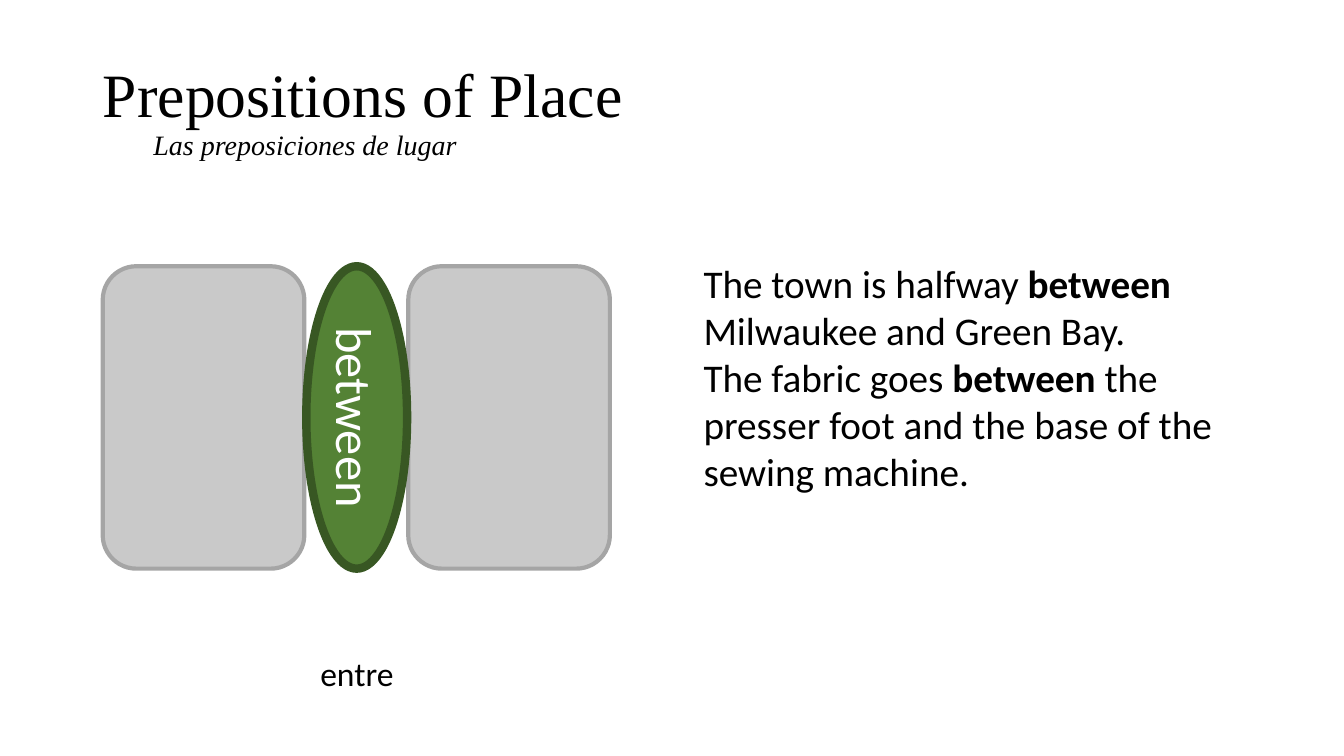
import pptx
import pptx.dml.color
import pptx.enum.shapes
import pptx.enum.text
import pptx.util

Cm = pptx.util.Cm
Pt = pptx.util.Pt
SHAPE = pptx.enum.shapes.MSO_SHAPE
ALIGN = pptx.enum.text.PP_ALIGN
ANCHOR = pptx.enum.text.MSO_ANCHOR
FIT = pptx.enum.text.MSO_AUTO_SIZE

HUES = {
    "text": "000000",
    "light": "FFFFFF",
    "tile": "C9C9C9",
    "rim": "A5A5A5",
    "green": "548235",
    "edge": "385723",
}
TILE_LEFT, TILE_TOP, TILE_STEP = 2.59, 6.71, 7.7
TILE_WIDTH, TILE_HEIGHT = 5.08, 7.62
OVAL_LEFT, OVAL_WIDTH = 7.72, 2.54

EXAMPLES = [
    ["The town is halfway ", "between", " Milwaukee and Green Bay."],
    ["The fabric goes ", "between",
     " the presser foot and the base of the sewing machine."],
]


class Page:
    def __init__(self, deck):
        self.slide = deck.slides.add_slide(deck.slide_layouts[5])
        self.serif = "Times New Roman"
        self.sans = "Calibri"

    def color(self, name):
        return pptx.dml.color.RGBColor.from_string(HUES[name])

    def style(self, run, size, face, hue="text"):
        run.font.size = Pt(size)
        run.font.name = face
        run.font.color.rgb = self.color(hue)

    def place(self, shape, left, top, width, height):
        shape.left, shape.top = Cm(left), Cm(top)
        shape.width, shape.height = Cm(width), Cm(height)

    def title(self, head, sub, *box):
        """Fill the title with a heading and an indented italic second line."""
        shape = self.slide.shapes.title
        self.place(shape, *box)
        frame = shape.text_frame
        frame.text = f"{head}\v\t{sub}"
        frame.auto_size = FIT.NONE
        frame.vertical_anchor = ANCHOR.MIDDLE
        line = frame.paragraphs[0]
        line.alignment = ALIGN.LEFT
        line.line_spacing = 0.9
        first, second = line.runs
        self.style(first, 44, self.serif)
        self.style(second, 20, self.serif)
        second.font.italic = True

    def shape(self, kind, fill, edge, weight, *box):
        shape = self.slide.shapes.add_shape(kind, *map(Cm, box))
        shape.shadow.inherit = False
        shape.fill.solid()
        shape.fill.fore_color.rgb = self.color(fill)
        shape.line.color.rgb = self.color(edge)
        shape.line.width = Pt(weight)
        return shape

    def turned(self, shape, text, size):
        """Write text that runs down the shape."""
        frame = shape.text_frame
        frame.text = text
        frame.vertical_anchor = ANCHOR.BOTTOM
        shape.element.txBody.bodyPr.set("vert", "vert")
        line = frame.paragraphs[0]
        line.alignment = ALIGN.CENTER
        self.style(line.runs[0], size, self.sans, "light")

    def text(self, lines, size, align, wrap, *box):
        """Write lines made of parts, with every second part bold."""
        frame = self.slide.shapes.add_textbox(*map(Cm, box)).text_frame
        frame.word_wrap = wrap
        frame.auto_size = FIT.SHAPE_TO_FIT_TEXT
        for count, parts in enumerate(lines):
            line = frame.add_paragraph() if count else frame.paragraphs[0]
            line.alignment = align
            for index, part in enumerate(parts):
                run = line.add_run()
                run.text = part
                self.style(run, size, self.sans)
                run.font.bold = index % 2 == 1


def main():
    deck = pptx.Presentation()
    deck.slide_width, deck.slide_height = Cm(33.87), Cm(19.05)
    page = Page(deck)
    page.title("Prepositions of Place", "Las preposiciones de lugar",
               2.34, 1.01, 29.21, 3.68)
    for step in (1, 0):
        page.shape(SHAPE.ROUNDED_RECTANGLE, "tile", "rim", 3,
                   TILE_LEFT + step * TILE_STEP, TILE_TOP,
                   TILE_WIDTH, TILE_HEIGHT)
    oval = page.shape(SHAPE.OVAL, "green", "edge", 6,
                      OVAL_LEFT, TILE_TOP, OVAL_WIDTH, TILE_HEIGHT)
    page.turned(oval, "between", 36)
    page.text(EXAMPLES, 28, ALIGN.LEFT, True, 17.48, 6.4, 14.05, 6.25)
    page.text([["entre"]], 24, ALIGN.CENTER, False, 7.8, 16.33, 2.39, 1.27)
    deck.save("out.pptx")


if __name__ == "__main__":
    main()
